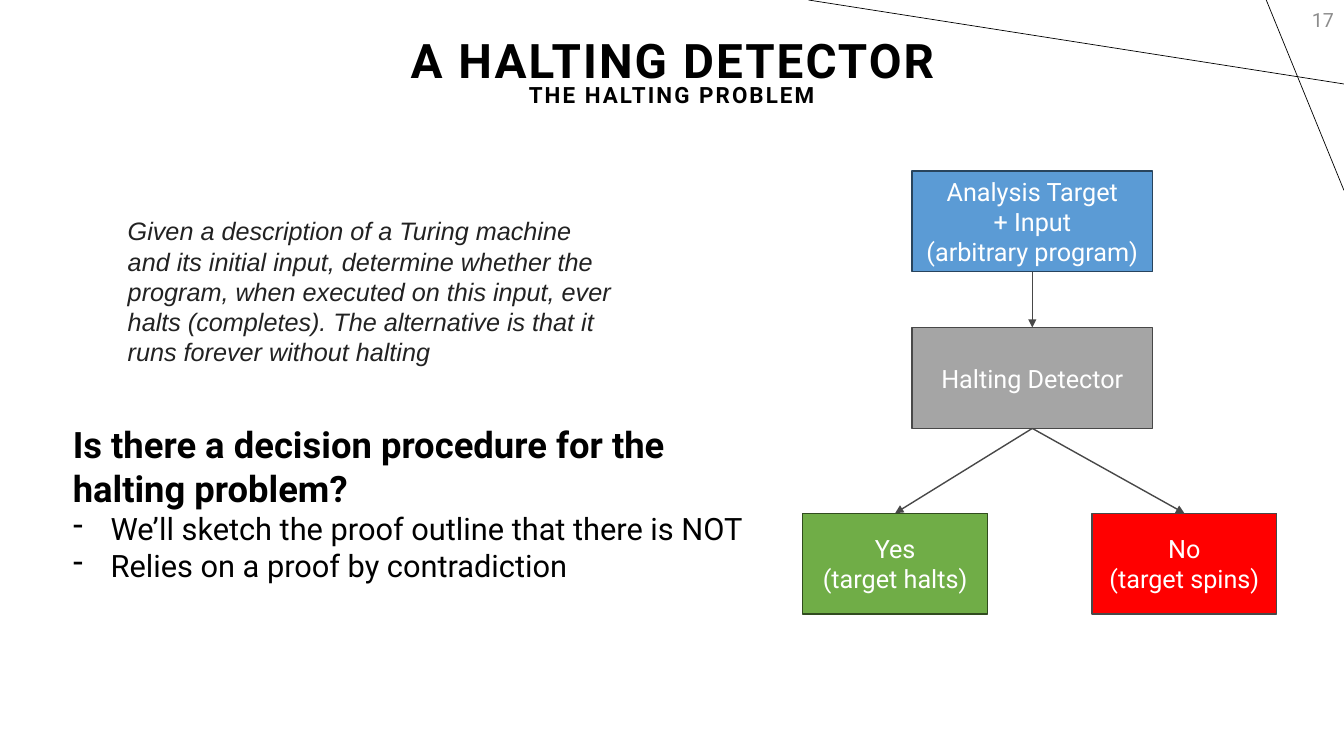
from lxml.etree import SubElement
from pptx import Presentation
from pptx.dml.color import RGBColor
from pptx.enum.shapes import MSO_CONNECTOR, MSO_SHAPE
from pptx.enum.text import MSO_ANCHOR, MSO_AUTO_SIZE, PP_ALIGN
from pptx.oxml.ns import qn
from pptx.util import Pt

BLACK = RGBColor(0x00, 0x00, 0x00)
WHITE = RGBColor(0xFF, 0xFF, 0xFF)
INK = RGBColor(0x22, 0x22, 0x22)
NUMBER_GREY = RGBColor(0x8C, 0x8C, 0x8C)
DARK_GREY = RGBColor(0x48, 0x48, 0x48)
GREY = RGBColor(0xA5, 0xA5, 0xA5)
BLUE = RGBColor(0x5B, 0x9B, 0xD5)
DARK_BLUE = RGBColor(0x28, 0x44, 0x5D)
GREEN = RGBColor(0x70, 0xAD, 0x47)
DARK_GREEN = RGBColor(0x31, 0x4C, 0x1F)
RED = RGBColor(0xFF, 0x00, 0x00)

PAGE_WIDTH, PAGE_HEIGHT = 960, 540

TITLE = "A HALTING DETECTOR"
SUBTITLE = "THE HALTING PROBLEM"
PAGE_NUMBER = "17"
DEFINITION = (
    "Given a description of a Turing machine and its initial input, determine "
    "whether the program, when executed on this input, ever halts (completes). "
    "The alternative is that it runs forever without halting"
)
QUESTION = "Is there a decision procedure for the halting problem?"
ANSWERS = [
    "We’ll sketch the proof outline that there is NOT",
    "Relies on a proof by contradiction",
]

# Flowchart: name -> (lines, centre x, top, width, fill, outline)
BOX_HEIGHT = 72
STEPS = {
    "target": (["Analysis Target", "+ Input", "(arbitrary program)"],
               737.4, 122.2, 172, BLUE, DARK_BLUE),
    "detector": (["Halting Detector"], 737.4, 234, 172, GREY, DARK_GREY),
    "yes": (["Yes", "(target halts)"], 639.4, 366.6, 132, GREEN, DARK_GREEN),
    "no": (["No", "(target spins)"], 846, 366.6, 132, RED, DARK_GREY),
}
ARROWS = [("target", "detector"), ("detector", "yes"), ("detector", "no")]

# Decorative corner lines: start x, start y, end x, end y
CORNER_LINES = [(PAGE_WIDTH, 60, 577.5, 0), (904.5, 0, PAGE_WIDTH, 136)]


def write(frame, lines, size, color, align=PP_ALIGN.LEFT, name="Roboto",
          anchor=MSO_ANCHOR.TOP, **font):
    """Fill a text frame with one equally formatted paragraph per line."""
    frame.word_wrap = True
    frame.auto_size = MSO_AUTO_SIZE.NONE
    frame.vertical_anchor = anchor
    for index, line in enumerate(lines):
        para = frame.paragraphs[0] if index == 0 else frame.add_paragraph()
        add_span(para, line, size, color, align, name, **font)


def add_span(para, text, size, color, align=PP_ALIGN.LEFT, name="Roboto", **font):
    para.alignment = align
    span = para.add_run()
    span.text = text
    span.font.color.rgb = color
    for key, value in {"size": Pt(size), "name": name, **font}.items():
        setattr(span.font, key, value)


def text_box(page, left, top, width, height):
    return page.shapes.add_textbox(Pt(left), Pt(top), Pt(width), Pt(height)).text_frame


def add_line(page, points, color, width):
    line = page.shapes.add_connector(MSO_CONNECTOR.STRAIGHT, *map(Pt, points))
    line.line.color.rgb = color
    line.line.width = Pt(width)
    SubElement(line._element.spPr, qn("a:effectLst"))
    return line


def style_heading(frame, text, size):
    write(frame, [text], size, BLACK, PP_ALIGN.CENTER, anchor=MSO_ANCHOR.MIDDLE, bold=True)
    para = frame.paragraphs[0]
    para.line_spacing = 0.9
    para.runs[0].font._element.set("spc", "150")


def add_headings(page):
    title = page.shapes.title
    place = {"left": 1.4, "top": -7.2, "width": 958.4, "height": 104.4}
    for key, value in place.items():
        setattr(title, key, Pt(value))
    style_heading(title.text_frame, TITLE, 34)
    style_heading(text_box(page, 0.7, 16.6, 958.4, 104.4), SUBTITLE, 16)
    write(text_box(page, 744, 0, 216, 28.8), [PAGE_NUMBER], 14, NUMBER_GREY,
          PP_ALIGN.RIGHT, anchor=MSO_ANCHOR.MIDDLE)


def add_argument(page):
    write(text_box(page, 84.2, 150.5, 360, 116.6), [DEFINITION], 18, INK,
          name="Arial", italic=True)
    frame = text_box(page, 44.9, 298, 497, 124)
    write(frame, [QUESTION], 26, BLACK, bold=True)
    for answer in ANSWERS:
        para = frame.add_paragraph()
        add_span(para, answer, 22, BLACK, bold=False)
        properties = para._p.get_or_add_pPr()
        properties.set("marL", str(Pt(27)))
        properties.set("indent", str(Pt(-27)))
        SubElement(properties, qn("a:buFontTx"))
        SubElement(properties, qn("a:buChar"), char="-")


def add_step(page, lines, center, top, width, fill, outline):
    box = page.shapes.add_shape(MSO_SHAPE.RECTANGLE, Pt(center - width / 2), Pt(top),
                                Pt(width), Pt(BOX_HEIGHT))
    box.shadow.inherit = False
    box.fill.solid()
    box.fill.fore_color.rgb = fill
    box.line.color.rgb = outline
    box.line.width = Pt(1)
    write(box.text_frame, lines, 18, WHITE, PP_ALIGN.CENTER, anchor=MSO_ANCHOR.MIDDLE)
    return box


def add_flowchart(page):
    boxes = {name: add_step(page, *step) for name, step in STEPS.items()}
    bottom_site, top_site = 2, 0
    for source, goal in ARROWS:
        _, start_x, start_top, *_ = STEPS[source]
        _, end_x, end_top, *_ = STEPS[goal]
        points = (start_x, start_top + BOX_HEIGHT, end_x, end_top)
        arrow = add_line(page, points, DARK_GREY, 1)
        arrow.begin_connect(boxes[source], bottom_site)
        arrow.end_connect(boxes[goal], top_site)
        SubElement(arrow.line._get_or_add_ln(), qn("a:tailEnd"), type="triangle")


def main():
    deck = Presentation()
    deck.slide_width, deck.slide_height = Pt(PAGE_WIDTH), Pt(PAGE_HEIGHT)
    page = deck.slides.add_slide(deck.slide_layouts.get_by_name("Title Only"))
    for points in CORNER_LINES:
        add_line(page, points, BLACK, 0.5)
    add_headings(page)
    add_argument(page)
    add_flowchart(page)
    deck.save("out.pptx")


if __name__ == "__main__":
    main()
